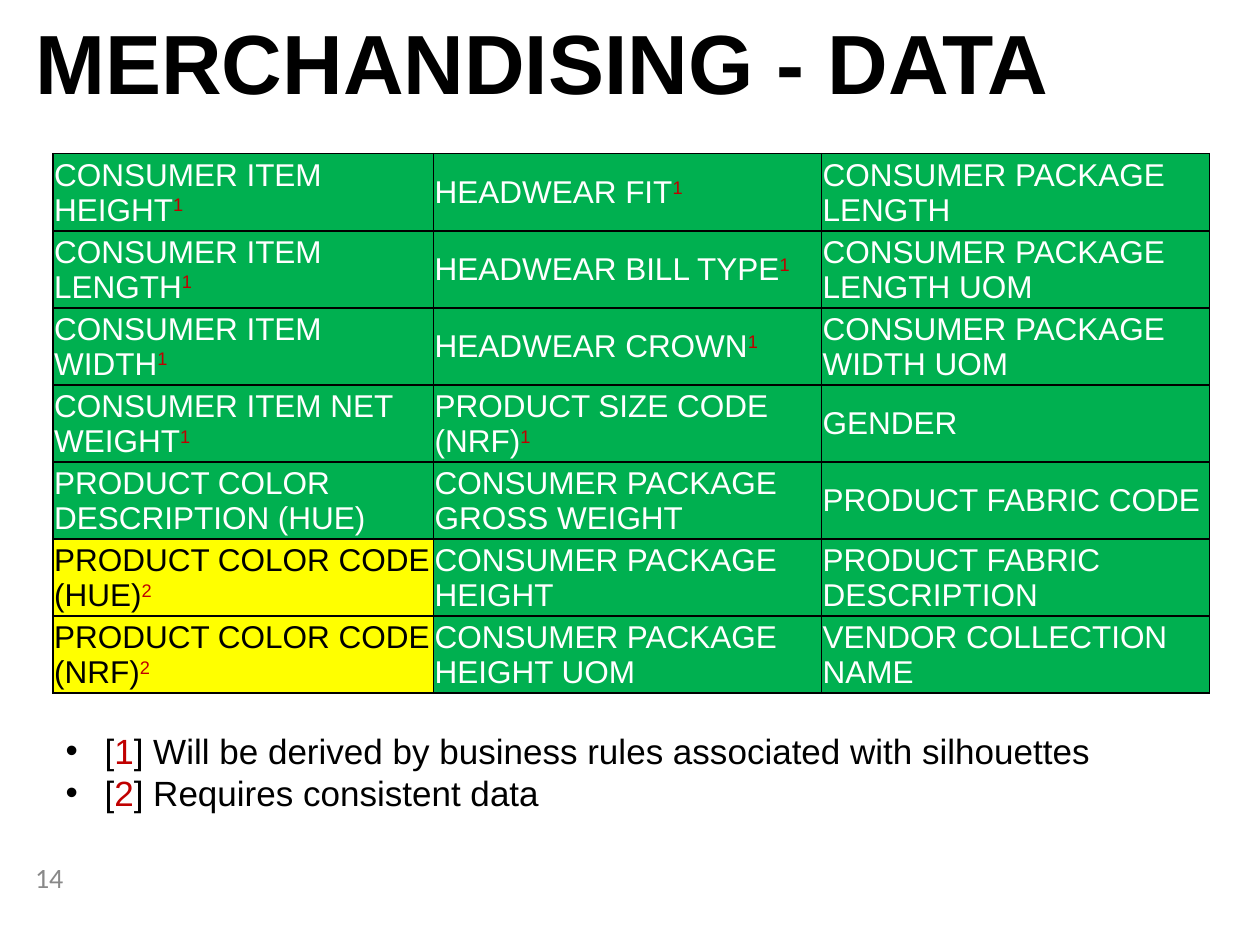
from lxml.etree import SubElement
from pptx import Presentation
from pptx.dml.color import RGBColor as Rgb
from pptx.enum.text import MSO_ANCHOR as Anchor, MSO_AUTO_SIZE as AutoSize
from pptx.oxml.ns import qn
from pptx.util import Inches, Pt

THEME = {
    "font": "Arial", "number_font": "Calibri",
    "black": Rgb.from_string("000000"), "white": Rgb.from_string("FFFFFF"),
    "green": Rgb.from_string("00B050"), "yellow": Rgb.from_string("FFFF00"),
    "red": Rgb.from_string("C00000"), "grey": Rgb.from_string("898989"),
    "title": Pt(48), "list": Pt(20), "cell": Pt(18), "number": Pt(16),
}
COLUMN_WIDTHS = [3.02, 3.08, 3.08]
MIN_ROW_HEIGHT = 0.26  # rows grow to fit their text
TABLE_LEFT, TABLE_TOP, TABLE_HEIGHT = 0.42, 1.22, 4.27

# A caret separates a field from its footnote mark
FIELDS = [
    ["CONSUMER ITEM HEIGHT^1", "HEADWEAR FIT^1", "CONSUMER PACKAGE LENGTH"],
    ["CONSUMER ITEM LENGTH^1", "HEADWEAR BILL TYPE^1", "CONSUMER PACKAGE LENGTH UOM"],
    ["CONSUMER ITEM WIDTH^1", "HEADWEAR CROWN^1", "CONSUMER PACKAGE WIDTH UOM"],
    ["CONSUMER ITEM NET WEIGHT^1", "PRODUCT SIZE CODE (NRF)^1", "GENDER"],
    ["PRODUCT COLOR DESCRIPTION (HUE)", "CONSUMER PACKAGE GROSS WEIGHT", "PRODUCT FABRIC CODE"],
    ["PRODUCT COLOR CODE (HUE)^2", "CONSUMER PACKAGE HEIGHT", "PRODUCT FABRIC DESCRIPTION"],
    ["PRODUCT COLOR CODE (NRF)^2", "CONSUMER PACKAGE HEIGHT UOM", "VENDOR COLLECTION NAME"],
]
FOOTNOTES = [
    ("1", "Will be derived by business rules associated with silhouettes"),
    ("2", "Requires consistent data"),
]


def add_span(para, text, size, color, font="font", bold=False):
    span = para.add_run()
    span.text = text
    span.font.name = THEME[font]
    span.font.size = THEME[size]
    span.font.color.rgb = THEME[color]
    span.font.bold = bold
    return span


def place(box, left, top, width, height):
    box.left, box.top = Inches(left), Inches(top)
    box.width, box.height = Inches(width), Inches(height)


deck = Presentation()
deck.slide_width, deck.slide_height = Inches(10), Inches(7.5)
page = deck.slides.add_slide(deck.slide_layouts[1])

# Title
title = page.shapes.title
place(title, 0.18, 0.24, 9.55, 0.66)
title.text_frame.vertical_anchor = Anchor.TOP
title.text_frame.auto_size = AutoSize.NONE
para = title.text_frame.paragraphs[0]
para._p.get_or_add_pPr().set("algn", "l")
para.line_spacing = Pt(43)
add_span(para, "MERCHANDISING - DATA", "title", "black", bold=True)

# Table of fields
table_box = page.shapes.add_table(
    len(FIELDS), len(COLUMN_WIDTHS), Inches(TABLE_LEFT), Inches(TABLE_TOP),
    Inches(sum(COLUMN_WIDTHS)), Inches(TABLE_HEIGHT))
table = table_box.table
table.first_row = table.horz_banding = False
for column, width in zip(table.columns, COLUMN_WIDTHS):
    column.width = Inches(width)
for row, fields in zip(table.rows, FIELDS):
    row.height = Inches(MIN_ROW_HEIGHT)
    for cell, field in zip(row.cells, fields):
        name, _, mark = field.partition("^")
        inconsistent = mark == "2"
        cell.vertical_anchor = Anchor.MIDDLE
        cell.margin_left = cell.margin_right = cell.margin_top = Inches(0.01)
        cell.margin_bottom = Pt(0.1)
        for side in ("a:lnL", "a:lnR", "a:lnT", "a:lnB"):
            line = SubElement(cell._tc.get_or_add_tcPr(), qn(side), w=str(Pt(1)))
            paint = SubElement(line, qn("a:solidFill"))
            SubElement(paint, qn("a:srgbClr"), val=str(THEME["black"]))
        cell.fill.solid()
        cell.fill.fore_color.rgb = THEME["yellow" if inconsistent else "green"]
        para = cell.text_frame.paragraphs[0]
        add_span(para, name, "cell", "black" if inconsistent else "white")
        if mark:
            span = add_span(para, mark, "cell", "red")
            span._r.get_or_add_rPr().set("baseline", "30000")
table_box.height = Inches(TABLE_HEIGHT)

# Footnotes
notes = page.placeholders[1]
place(notes, TABLE_LEFT, 5.74, 8.4, 0.77)
frame = notes.text_frame
frame.word_wrap = False
frame.auto_size = AutoSize.SHAPE_TO_FIT_TEXT
for index, (mark, meaning) in enumerate(FOOTNOTES):
    para = frame.add_paragraph() if index else frame.paragraphs[0]
    props = para._p.get_or_add_pPr()
    props.set("marL", str(Inches(0.31)))
    props.set("indent", str(-Inches(0.31)))
    SubElement(props, qn("a:buFont"), typeface=THEME["font"])
    SubElement(props, qn("a:buChar"), char="•")
    para.space_before = Pt(0)
    para.line_spacing = Pt(24)
    add_span(para, "[", "list", "black")
    add_span(para, mark, "list", "red")
    add_span(para, f"] {meaning}", "list", "black")

# Page number
number = page.shapes.add_textbox(0, 0, 0, 0)
place(number, 0.18, 6.76, 2.33, 0.4)
number.text_frame.word_wrap = True
number.text_frame.vertical_anchor = Anchor.MIDDLE
add_span(number.text_frame.paragraphs[0], "14", "number", "grey", "number_font")

deck.save("out.pptx")
